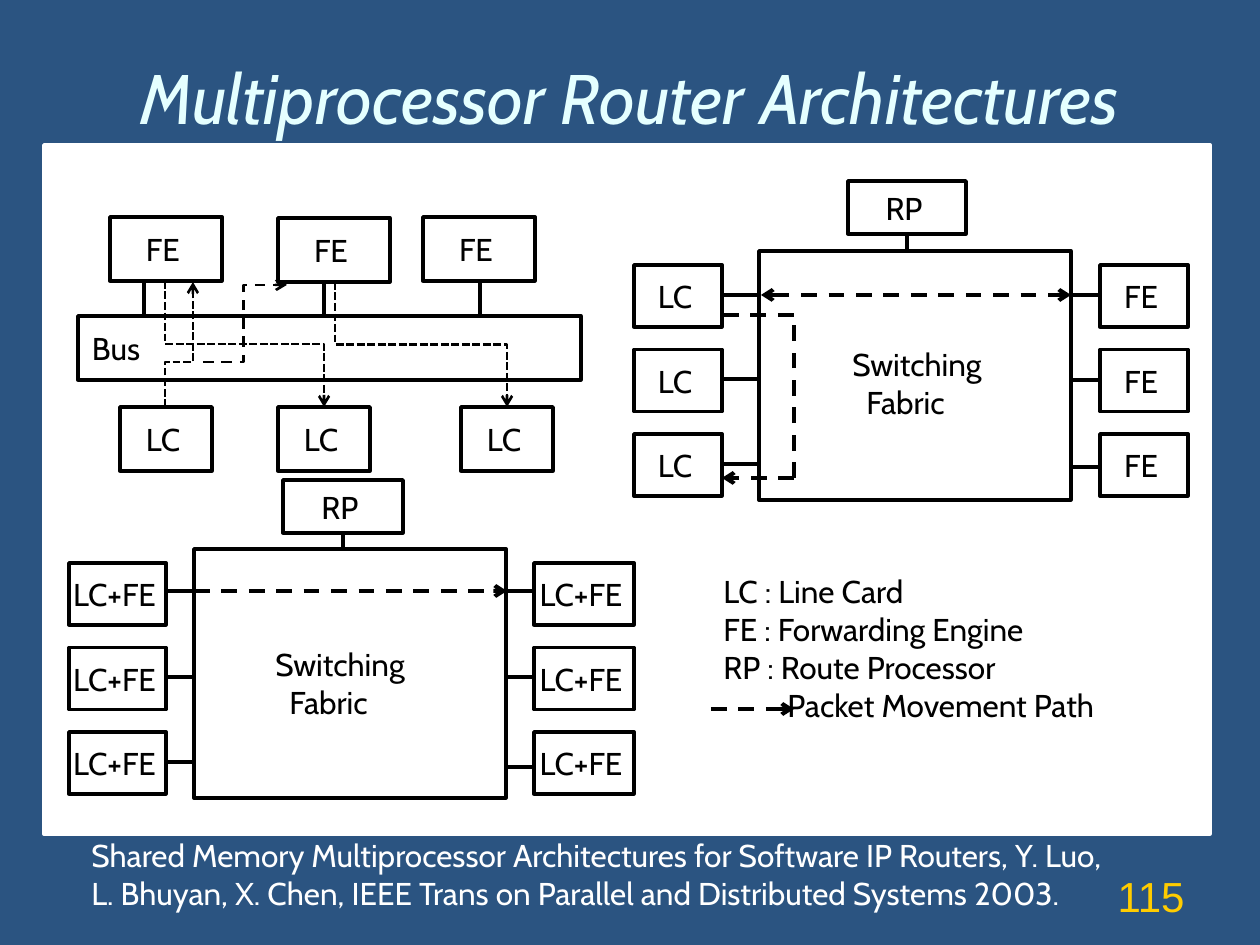
from pptx import Presentation
from pptx.dml.color import RGBColor
from pptx.enum.dml import MSO_LINE
from pptx.enum.shapes import MSO_CONNECTOR as CONN, MSO_SHAPE
from pptx.enum.text import MSO_ANCHOR as ANCHOR, PP_ALIGN as ALIGN
from pptx.oxml.ns import qn
from pptx.oxml.xmlchemy import OxmlElement
from pptx.util import Pt

PX = 914400 / 126
COLORS = {"bg": "2B5481", "title": "E5FFFF", "white": "FFFFFF",
          "black": "000000", "number": "FFCC00"}
C = {name: RGBColor.from_string(value) for name, value in COLORS.items()}
DASH, FINE = MSO_LINE.DASH, MSO_LINE.SQUARE_DOT


def add_text(box, lines="", color="black", align=ALIGN.CENTER, anchor=ANCHOR.MIDDLE,
             size=18, font="Cabin", last_indent=0, shape=None):
    """Put lines into a shape, or into a new text box at box; return its frame."""
    s = shape or slide.shapes.add_textbox(*[round(v * PX) for v in box])
    tf = s.text_frame
    tf.word_wrap = True
    tf.vertical_anchor = anchor
    tf.text = lines
    for p in tf.paragraphs:
        p.alignment = align
        for r in p.runs:
            r.font.size, r.font.name = Pt(size), font
            r.font.color.rgb = C[color]
    if last_indent:
        tf.paragraphs[-1]._p.get_or_add_pPr().set("marL", str(round(last_indent * PX)))
    return tf


def add_line(x1, y1, x2, y2, width=2.25, dash=None, head=False, tail=False,
             kind=CONN.STRAIGHT, bend=None, upright=False):
    """Draw a connector; an upright elbow leaves and arrives vertically."""
    ends = x1, y1, x2, y2
    if upright:
        cx, cy, dx, dy = (x1 + x2) / 2, (y1 + y2) / 2, x2 - x1, y2 - y1
        ends = cx + dy / 2, cy - dx / 2, cx - dy / 2, cy + dx / 2
    s = slide.shapes.add_connector(kind, *[round(v * PX) for v in ends])
    s.line.color.rgb = C["black"]
    s.line.width = Pt(width)
    if dash:
        s.line.dash_style = dash
    spPr = s._element.spPr
    if upright:
        spPr.find(qn("a:xfrm")).set("rot", "16200000")
    if bend:
        gd = OxmlElement("a:gd")
        gd.set("name", "adj1")
        gd.set("fmla", f"val {round(bend * 100000)}")
        spPr.find(qn("a:prstGeom")).find(qn("a:avLst")).append(gd)
    for tag, wanted in (("a:headEnd", head), ("a:tailEnd", tail)):
        if wanted:
            end = OxmlElement(tag)
            end.set("type", "arrow")
            spPr.find(qn("a:ln")).append(end)
    spPr.append(OxmlElement("a:effectLst"))


prs = Presentation()
prs.slide_width, prs.slide_height = round(1260 * PX), round(945 * PX)
slide = prs.slides.add_slide(prs.slide_layouts[5])
slide.background.fill.solid()
slide.background.fill.fore_color.rgb = C["bg"]

title = slide.shapes.title
title.left, title.top, title.width, title.height = [
    round(v * PX) for v in (44, 33, 1171, 127)]
add_text(None, "Multiprocessor Router Architectures", "title", size=40, shape=title)
title.text_frame.paragraphs[0].runs[0].font.italic = True

add_text((903, 861, 294, 66), "115", "number", ALIGN.RIGHT, ANCHOR.BOTTOM, 24, "Arial")
citation = add_text(
    (79, 830, 1109, 88),
    "Shared Memory Multiprocessor Architectures for Software IP Routers, Y. Luo,\n"
    "L. Bhuyan, X. Chen, IEEE Trans on Parallel and Distributed Systems 2003.",
    "white", ALIGN.LEFT, ANCHOR.TOP)
citation.word_wrap = False

# Boxes of all three architectures: left, top, width, height, label
ROW_H = 62
boxes = [(78, 316, 503, 64, "Bus")]
boxes += [(x, y, 112, 64, "FE") for x, y in ((110, 217), (278, 218), (423, 217))]
boxes += [(x, 407, 92, 64, "LC") for x in (120, 278, 461)]

# Fabric left and top, caption left and top, route processor box,
# left and right cards (left, width, label), first row, stub heights left and right
FABRIC_W, FABRIC_H = 312, 249
fabrics = [
    (759, 251, 840, 339, (848, 181, 118, 53), (634, 88, "LC"), (1100, 88, "FE"),
     265, (295, 379, 464), (295, 380, 467)),
    (194, 549, 263, 639, (283, 480, 120, 53), (69, 97, "LC+FE"), (534, 100, "LC+FE"),
     563, (591, 677, 762), (591, 677, 767)),
]
for x, y, _, _, rp, left, right, first_row, _, _ in fabrics:
    boxes += [(x, y, FABRIC_W, FABRIC_H, ""), (*rp, "RP")]
    for card_x, card_w, label in (left, right):
        boxes += [(card_x, first_row + 84.5 * i, card_w, ROW_H, label) for i in range(3)]

panel = (44, 145, 1166, 689, "")
for *box, label in [panel] + boxes:
    s = slide.shapes.add_shape(MSO_SHAPE.RECTANGLE, *[round(v * PX) for v in box])
    s.shadow.inherit = False
    s.line.width = Pt(2)
    if tuple(box) == panel[:4]:
        s.fill.solid()
        s.fill.fore_color.rgb = s.line.color.rgb = C["white"]
        continue
    s.fill.background()
    s.line.color.rgb = C["black"]
    if label:
        align = ALIGN.LEFT if label == "Bus" else ALIGN.CENTER
        tf = add_text(None, label, align=align, shape=s)
        tf.margin_left = round(14 * PX) if label == "Bus" else 0
        tf.margin_right = round(6 * PX)

# Bus architecture: links and packet paths
for x in (144, 324, 480):
    add_line(x, 282, x, 316)
for ends, bend in (((165, 281, 324, 407), 0.5), ((335, 282, 507, 407), 0.5),
                   ((165, 407, 193, 282), 0.36)):
    add_line(*ends, 1.5, FINE, tail=True, kind=CONN.ELBOW, bend=bend, upright=True)
add_line(203, 362, 287, 285, 1.5, DASH, tail=True, kind=CONN.ELBOW, bend=0.48)

# Switching fabrics: captions and links
for x, y, text_x, text_y, rp, left, right, _, left_ys, right_ys in fabrics:
    add_text((text_x, text_y, 198, 89), "Switching\nFabric", align=ALIGN.LEFT,
             anchor=ANCHOR.TOP, last_indent=14)
    rp_x = rp[0] + rp[2] / 2
    add_line(rp_x, rp[1] + rp[3], rp_x, y)
    for left_y, right_y in zip(left_ys, right_ys):
        add_line(left[0] + left[1], left_y, x, left_y)
        add_line(x + FABRIC_W, right_y, right[0], right_y)

# Packet paths through the fabrics
add_line(761, 295, 1071, 295, dash=DASH, head=True, tail=True)
add_line(723, 315, 794, 315, dash=DASH)
add_line(794, 478, 794, 315, dash=DASH)
add_line(794, 478, 722, 478, dash=DASH, tail=True)
add_line(194, 591, 507, 591, dash=DASH, tail=True)

# Legend
add_text((711, 566, 465, 165),
         "LC : Line Card\nFE : Forwarding Engine\nRP : Route Processor\n"
         "Packet Movement Path", align=ALIGN.LEFT, anchor=ANCHOR.TOP, last_indent=64)
add_line(711, 709, 794, 709, dash=DASH, tail=True)

prs.save("out.pptx")
